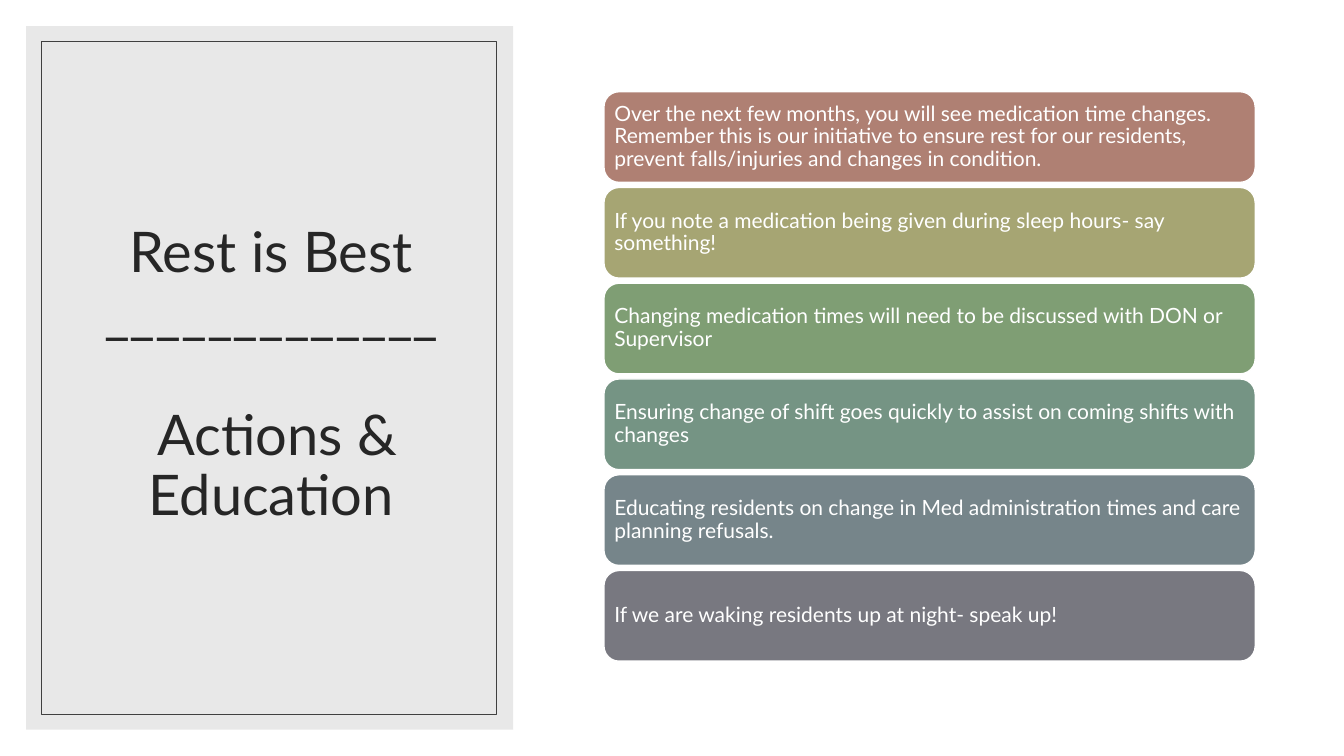
from lxml import etree
from pptx import Presentation
from pptx.dml.color import RGBColor
from pptx.enum.shapes import MSO_SHAPE
from pptx.enum.text import MSO_ANCHOR, MSO_AUTO_SIZE, PP_ALIGN
from pptx.oxml.ns import qn
from pptx.util import Pt

RECT, ROUNDED = MSO_SHAPE.RECTANGLE, MSO_SHAPE.ROUNDED_RECTANGLE
MIDDLE, NO_FIT = MSO_ANCHOR.MIDDLE, MSO_AUTO_SIZE.NONE
LEFT, CENTER = PP_ALIGN.LEFT, PP_ALIGN.CENTER
PX = 9144  # 100 px to the inch

THEME = {
    "font": "Lato", "title_size": 40, "bar_size": 15,
    "panel": "D9D9D9", "frame": "404040", "title": "262626", "white": "FFFFFF",
}
BARS = [
    ("AF8073", "Over the next few months, you will see medication time changes. "
               "Remember this is our initiative to ensure rest for our residents, "
               "prevent falls/injuries and changes in condition."),
    ("A6A573", "If you note a medication being given during sleep hours- say something!"),
    ("7F9E74", "Changing medication times will need to be discussed with DON or Supervisor"),
    ("759484", "Ensuring change of shift goes quickly to assist on coming shifts with changes"),
    ("76858A", "Educating residents on change in Med administration times and care "
               "planning refusals."),
    ("787880", "If we are waking residents up at night- speak up!"),
]


def add_box(kind, box, fill=None, line=None, width=1):
    sp = s.shapes.add_shape(kind, *(v * PX for v in box))
    sp.shadow.inherit = False
    if fill:
        sp.fill.solid()
        sp.fill.fore_color.rgb = RGBColor.from_string(fill)
    else:
        sp.fill.background()
    if line:
        sp.line.color.rgb = RGBColor.from_string(line)
        sp.line.width = Pt(width)
    else:
        sp.line.fill.background()
    return sp


def set_text(sp, text, size, color, align):
    tf = sp.text_frame
    tf.text = text
    frame = {"word_wrap": True, "auto_size": NO_FIT, "vertical_anchor": MIDDLE}
    for name, value in frame.items():
        setattr(tf, name, value)
    for p in tf.paragraphs:
        p.alignment, p.line_spacing = align, 0.9
        for r in p.runs:
            r.font.name, r.font.size = THEME["font"], Pt(size)
            r.font.color.rgb = RGBColor.from_string(color)
    return tf


prs = Presentation()
prs.slide_width, prs.slide_height = 1333 * PX, 750 * PX
s = prs.slides.add_slide(prs.slide_layouts[5])

# Title
title = s.shapes.title
title_box = {"left": 63, "top": 61, "width": 412, "height": 624}
for name, value in title_box.items():
    setattr(title, name, value * PX)
tf = set_text(title, "Rest is Best\v_____________\n Actions & Education",
              THEME["title_size"], THEME["title"], CENTER)
tf.paragraphs[0].space_before = Pt(0)
tf.paragraphs[1].space_before = Pt(44)

# Translucent panel behind the title, thin frame over it
panel = add_box(RECT, (26, 26, 483, 698), THEME["panel"])
color = panel.fill._xPr.find(qn("a:solidFill"))[0]
etree.SubElement(color, qn("a:alpha"), val="60000")
title._element.addprevious(panel._element)
add_box(RECT, (41, 41, 451, 668), line=THEME["frame"], width=0.5)

# Stack of action bars
for i, (fill, text) in enumerate(BARS):
    bar = add_box(ROUNDED, (599, 91 + 95 * i, 646, 90), fill, THEME["white"])
    tf = set_text(bar, text, THEME["bar_size"], THEME["white"], LEFT)
    for side in ("left", "top", "right", "bottom"):
        setattr(tf, f"margin_{side}", 6 * PX)

prs.save("out.pptx")
